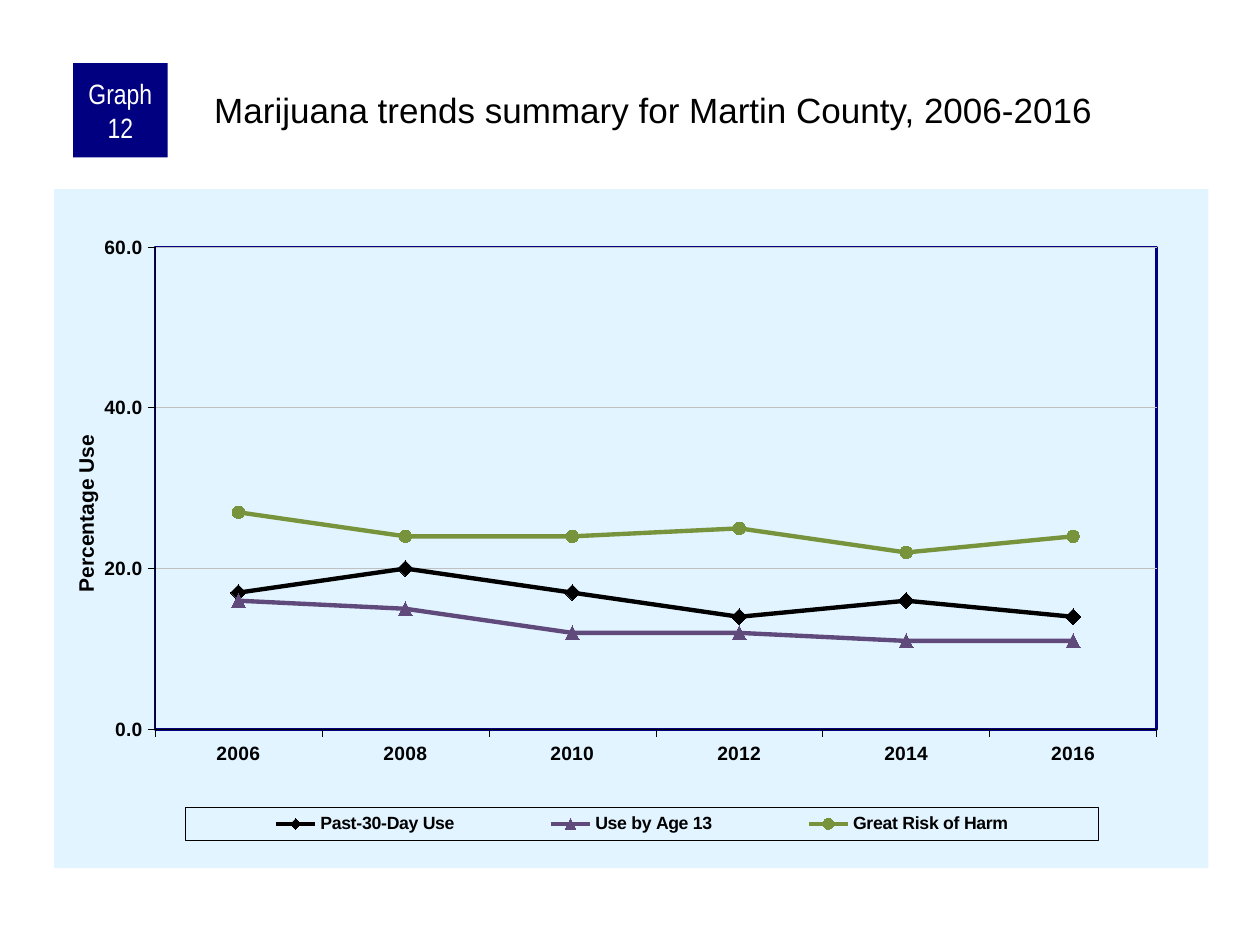
from lxml import etree
from pptx import Presentation
from pptx.chart.data import CategoryChartData
from pptx.dml.color import RGBColor
from pptx.enum.chart import XL_CHART_TYPE, XL_LEGEND_POSITION, XL_MARKER_STYLE, XL_TICK_MARK
from pptx.enum.shapes import MSO_SHAPE
from pptx.enum.text import MSO_ANCHOR, MSO_AUTO_SIZE, PP_ALIGN
from pptx.oxml import parse_xml
from pptx.oxml.ns import nsdecls, qn
from pptx.util import Pt

PX = 9144  # EMU per px, 100 px to the inch

BLACK = RGBColor(0x00, 0x00, 0x00)
WHITE = RGBColor(0xFF, 0xFF, 0xFF)
NAVY = RGBColor(0x00, 0x00, 0x80)
PURPLE = RGBColor(0x60, 0x4A, 0x7B)
GREEN = RGBColor(0x77, 0x93, 0x3C)
GRID_GREY = RGBColor(0xC0, 0xC0, 0xC0)
PALE_BLUE = RGBColor(0xE1, 0xF4, 0xFF)

YEARS = ["2006", "2008", "2010", "2012", "2014", "2016"]
TRENDS = [
    ("Past-30-Day Use", [17, 20, 17, 14, 16, 14], BLACK, XL_MARKER_STYLE.DIAMOND, 9),
    ("Use by Age 13", [16, 15, 12, 12, 11, 11], PURPLE, XL_MARKER_STYLE.TRIANGLE, 8),
    ("Great Risk of Harm", [27, 24, 24, 25, 22, 24], GREEN, XL_MARKER_STYLE.CIRCLE, 7),
]


def emu(box):
    return [length * PX for length in box]


def style_font(font, size, color, name="Arial", bold=False):
    font.name = name
    font.size = Pt(size)
    font.bold = bold
    font.color.rgb = color


def style_line(line, color, width):
    line.color.rgb = color
    line.width = Pt(width)


def set_insets(frame, left, top, right, bottom):
    frame.margin_left, frame.margin_top = left * PX, top * PX
    frame.margin_right, frame.margin_bottom = right * PX, bottom * PX


def fill_xml(color):
    return f'<a:solidFill><a:srgbClr val="{color}"/></a:solidFill>' if color else "<a:noFill/>"


def shape_properties(fill=None, line=None, width=0):
    return parse_xml(
        f'<c:spPr {nsdecls("c", "a")}>{fill_xml(fill)}'
        f'<a:ln w="{Pt(width)}">{fill_xml(line)}</a:ln></c:spPr>')


def set_layout(element, before, chart_size, place, inner=False):
    """Place a chart part, in px within the chart, ahead of the named sibling."""
    for old in element.findall(qn("c:layout")):
        element.remove(old)
    layout = etree.Element(qn("c:layout"))
    manual = etree.SubElement(layout, qn("c:manualLayout"))
    if inner:
        etree.SubElement(manual, qn("c:layoutTarget")).set("val", "inner")
    for side in "xy":
        etree.SubElement(manual, qn(f"c:{side}Mode")).set("val", "edge")
    for side, length, full in zip("xywh", place, chart_size * 2):
        etree.SubElement(manual, qn(f"c:{side}")).set("val", str(length / full))
    element.find(qn(before)).addprevious(layout)


def add_graph_badge(slide, box):
    badge = slide.shapes.add_shape(MSO_SHAPE.RECTANGLE, *emu(box))
    badge.shadow.inherit = False
    badge.fill.solid()
    badge.fill.fore_color.rgb = NAVY
    badge.line.fill.background()
    frame = badge.text_frame
    frame.word_wrap = True
    frame.vertical_anchor = MSO_ANCHOR.MIDDLE
    set_insets(frame, 5, 0, 5, 0)
    label = frame.paragraphs[0]
    label.alignment = PP_ALIGN.CENTER
    run = label.add_run()
    run.text = "Graph 12"
    style_font(run.font, 16, WHITE, "Arial Narrow")


def add_heading(slide, box):
    heading = slide.shapes.title
    heading.left, heading.top, heading.width, heading.height = emu(box)
    frame = heading.text_frame
    frame.word_wrap = True
    frame.auto_size = MSO_AUTO_SIZE.NONE
    frame.vertical_anchor = MSO_ANCHOR.TOP
    set_insets(frame, 3, 3, 0, 0)
    paragraph = frame.paragraphs[0]
    paragraph.alignment = PP_ALIGN.LEFT
    run = paragraph.add_run()
    run.text = "Marijuana trends summary for Martin County, 2006-2016"
    style_font(run.font, 20, BLACK)


def style_axes(chart, chart_size):
    for axis in (chart.category_axis, chart.value_axis):
        axis.major_tick_mark = XL_TICK_MARK.OUTSIDE
        axis.minor_tick_mark = XL_TICK_MARK.NONE
        style_font(axis.tick_labels.font, 11, BLACK, bold=True)
        style_line(axis.format.line, BLACK, 0.25)

    percentage = chart.value_axis
    percentage.minimum_scale = 0
    percentage.maximum_scale = 60
    percentage.major_unit = 20
    percentage.tick_labels.number_format = "0.0"
    percentage.tick_labels.number_format_is_linked = False
    percentage.has_major_gridlines = True
    style_line(percentage.major_gridlines.format.line, GRID_GREY, 0.25)
    title = percentage.axis_title
    run = title.text_frame.paragraphs[0].add_run()
    run.text = "Percentage Use"
    style_font(run.font, 12, BLACK, bold=True)
    title.text_frame._txBody.bodyPr.set("rot", "-5400000")
    set_layout(title._element, "c:overlay", chart_size, (12, 192))


def style_legend(chart, chart_size):
    chart.has_legend = True
    legend = chart.legend
    legend.position = XL_LEGEND_POSITION.RIGHT
    legend.include_in_layout = False
    style_font(legend.font, 10.1, BLACK, bold=True)
    set_layout(legend._element, "c:overlay", chart_size, (104, 491, 725, 26))
    legend._element.find(qn("c:txPr")).addprevious(shape_properties(line=BLACK, width=0.25))


def add_trend_chart(slide, box):
    data = CategoryChartData(number_format="0.0")
    data.categories = YEARS
    for name, values, *_ in TRENDS:
        data.add_series(name, values)
    chart = slide.shapes.add_chart(XL_CHART_TYPE.LINE_MARKERS, *emu(box), data).chart
    chart.has_title = False
    style_font(chart.font, 8, BLACK)
    chart.plots[0].vary_by_categories = False

    for series, (_, _, color, marker_style, size) in zip(chart.plots[0].series, TRENDS):
        series.smooth = False
        style_line(series.format.line, color, 2.5)
        series.marker.style = marker_style
        series.marker.size = size
        series.marker.format.fill.solid()
        series.marker.format.fill.fore_color.rgb = color
        style_line(series.marker.format.line, color, 0.75)

    chart_size = box[2:]
    style_axes(chart, chart_size)
    style_legend(chart, chart_size)
    plot_area = chart._chartSpace.chart.plotArea
    set_layout(plot_area, "c:lineChart", chart_size, (80, 46, 795, 383), inner=True)
    plot_area.append(shape_properties(line=NAVY, width=1.25))
    chart._chartSpace.find(qn("c:txPr")).addprevious(shape_properties(fill=PALE_BLUE))


def main():
    presentation = Presentation()
    presentation.slide_width, presentation.slide_height = emu((1000, 750))
    slide = presentation.slides.add_slide(presentation.slide_layouts[5])
    add_graph_badge(slide, (58, 50, 75, 75))
    add_heading(slide, (167, 67, 792, 83))
    add_trend_chart(slide, (43, 150, 916, 539))
    presentation.save("out.pptx")


if __name__ == "__main__":
    main()
